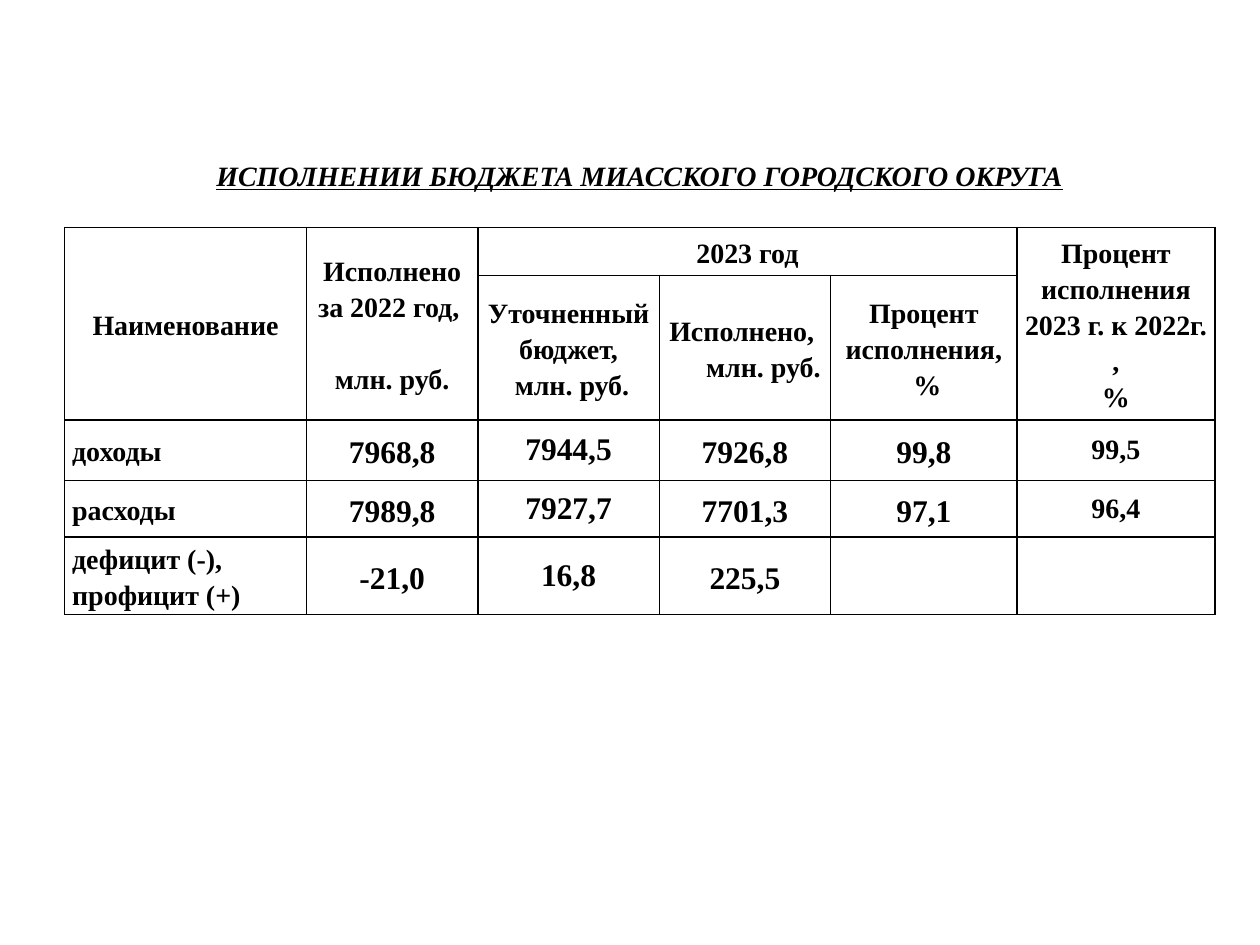
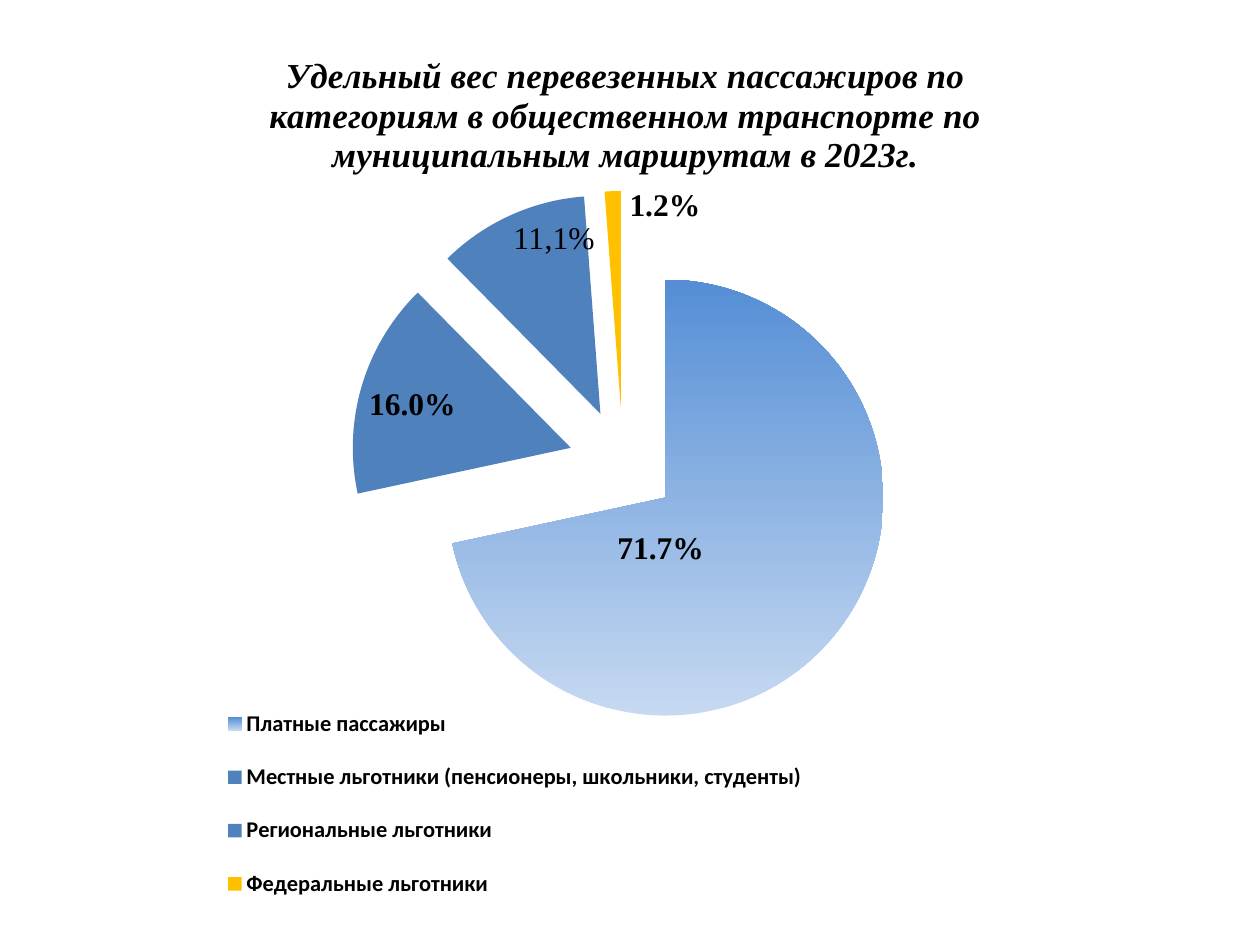
from pptx import Presentation
from pptx.chart.data import CategoryChartData
from pptx.dml.color import RGBColor
from pptx.enum.chart import XL_CHART_TYPE, XL_LABEL_POSITION, XL_LEGEND_POSITION
from pptx.enum.text import MSO_ANCHOR, PP_ALIGN
from pptx.oxml import parse_xml
from pptx.oxml.ns import nsdecls, qn
from pptx.util import Inches, Pt

BLACK = RGBColor(0x00, 0x00, 0x00)
BLUE = RGBColor(0x4F, 0x81, 0xBD)
GOLD = RGBColor(0xFF, 0xC0, 0x00)
PALE_BLUE = RGBColor(0xC6, 0xD9, 0xF1)
MID_BLUE = RGBColor(0x55, 0x8E, 0xD5)
SERIF, SANS = "Times New Roman", "Calibri"
LEFT, CENTER, RIGHT = PP_ALIGN.LEFT, PP_ALIGN.CENTER, PP_ALIGN.RIGHT
MIDDLE = MSO_ANCHOR.MIDDLE
LABEL_CENTER, INSIDE_END = XL_LABEL_POSITION.CENTER, XL_LABEL_POSITION.INSIDE_END
PIE, LEGEND_TOP = XL_CHART_TYPE.PIE, XL_LEGEND_POSITION.TOP
PERCENT = '0.0"%"'

prs = Presentation()
prs.slide_width, prs.slide_height = Inches(10), Inches(7.5)
PX, PY = prs.slide_width / 100, prs.slide_height / 100  # one percent of the slide
blank = prs.slide_layouts[6]


def style_font(font, size, name=SERIF, bold=True):
    font.size, font.name, font.bold = Pt(size), name, bold
    font.color.rgb = BLACK


def set_layout(parent, index, modes=(), **percents):
    """Give a chart element a manual layout, in percent of the chart."""
    for old in parent.findall(qn("c:layout")):
        parent.remove(old)
    body = "".join(f'<c:{k} val="{v}"/>' for k, v in modes)
    body += "".join(f'<c:{k} val="{v / 100}"/>' for k, v in percents.items())
    parent.insert(index, parse_xml(
        f'<c:layout {nsdecls("c")}><c:manualLayout>{body}</c:manualLayout></c:layout>'))


# Slide 1: budget table
s = prs.slides.add_slide(blank)
col_shares = [19.2, 13.6, 14.4, 1.6, 12, 1.6, 13.2, 15.7]
row_shares = [4.1, 3.58, 5.07, 15.3, 6.4, 6, 8.2]
frame = s.shapes.add_table(len(row_shares), len(col_shares), int(5.13 * PX), int(16.4 * PY),
                           int(sum(col_shares) * PX), int(sum(row_shares) * PY))
table = frame.table
table.first_row = table.horz_banding = False
for col, share in zip(table.columns, col_shares):
    col.width = int(share * PX)
for row, share in zip(table.rows, row_shares):
    row.height = int(share * PY)

# Merged areas: first and last cell
spans = [((0, 0), (0, 7)), ((1, 2), (1, 3)), ((1, 4), (1, 5)), ((2, 0), (3, 0)),
         ((2, 1), (3, 1)), ((2, 2), (2, 6)), ((2, 7), (3, 7))]
spans += [((r, c), (r, c + 1)) for r in range(3, 7) for c in (3, 5)]
for first, last in spans:
    table.cell(*first).merge(table.cell(*last))

# Cell texts: lines of (text, alignment, space before)
lines = {
    (0, 0): [("ИСПОЛНЕНИИ БЮДЖЕТА МИАССКОГО ГОРОДСКОГО ОКРУГА", CENTER, 0)],
    (2, 0): [("Наименование", CENTER, 0)],
    (2, 1): [("Исполнено за 2022 год, ", CENTER, 0), ("млн. руб.", CENTER, 21)],
    (2, 2): [("2023 год", CENTER, 0)],
    (2, 7): [("Процент исполнения 2023 г. к 2022г. ,", CENTER, 0), ("%", CENTER, 0)],
    (3, 2): [("Уточненный бюджет,", CENTER, 0), (" млн. руб.", CENTER, 0)],
    (3, 3): [("Исполнено,", LEFT, 0), ("млн. руб.", RIGHT, 0)],
    (3, 5): [("Процент исполнения,", CENTER, 0), (" %", CENTER, 0)],
}
budget = [
    ("доходы", "7968,8", "7944,5", "7926,8", "99,8", "99,5"),
    ("расходы", "7989,8", "7927,7", "7701,3", "97,1", "96,4"),
    ("дефицит (-), профицит (+)", "-21,0", "16,8", "225,5", "", ""),
]
for r, values in enumerate(budget, start=4):
    for c, value in zip((0, 1, 2, 3, 5, 7), values):
        if value:
            lines[r, c] = [(value, CENTER if c else LEFT, 0)]

for r in range(len(row_shares)):
    for c in range(len(col_shares)):
        cell = table.cell(r, c)
        cell.fill.background()
        cell.vertical_anchor = MIDDLE
        cell.margin_top = cell.margin_bottom = 0
        tight = r >= 4 and c in (2, 7)
        margin = 0.01 if tight else 0.08 if (r, c) == (3, 3) else 0.06
        cell.margin_left = cell.margin_right = Inches(margin)
        tf = cell.text_frame
        for i, (text, align, before) in enumerate(lines.get((r, c), [])):
            p = tf.add_paragraph() if i else tf.paragraphs[0]
            p.alignment = align
            p.line_spacing = 1.0 if tight else 1.15
            if before:
                p.space_before = Pt(before)
            run = p.add_run()
            run.text = text
            style_font(run.font, 18 if r >= 4 and 0 < c < 7 else 16)
            run.font.italic = run.font.underline = r == 0
        if (r, c) not in lines:
            tf.paragraphs[0]._p.append(parse_xml(f'<a:endParaRPr {nsdecls("a")} sz="1000"/>'))
        # Full grid below the heading, one rule under the spacer row
        sides = ["lnL", "lnR", "lnT", "lnB"] if r >= 2 else ["lnB"] if r == 1 else []
        for i, side in enumerate(sides):
            cell._tc.get_or_add_tcPr().insert(i, parse_xml(
                f'<a:{side} {nsdecls("a")} w="12700"><a:solidFill>'
                f'<a:srgbClr val="{BLACK}"/></a:solidFill></a:{side}>'))

# Slide 2: passenger pie chart
s = prs.slides.add_slide(blank)
data = CategoryChartData(number_format=PERCENT)
data.categories = ["Платные пассажиры", "Местные льготники (пенсионеры, школьники, студенты)",
                   "Региональные льготники", "Федеральные льготники"]
data.add_series("Series 1", (71.7, 16, 11.2, 1.2))
chart = s.shapes.add_chart(PIE, int(11.4 * PX), int(2.27 * PY),
                           int(76.4 * PX), int(95.47 * PY), data).chart
style_font(chart.font, 10, SANS, False)
edges = (("xMode", "edge"), ("yMode", "edge"))

# Title
chart.has_title = True
p = chart.chart_title.text_frame.paragraphs[0]
run = p.add_run()
run.text = ("Удельный вес перевезенных пассажиров по категориям "
            "в общественном транспорте по муниципальным маршрутам в 2023г.")
style_font(run.font, 20)
run.font.italic = True
set_layout(chart.chart_title._element, 1, edges, x=12.4, y=2.8)

# Legend and plot area
chart.has_legend = True
legend = chart.legend
legend.position = LEGEND_TOP
legend.include_in_layout = False
style_font(legend.font, 12.8, SANS)
set_layout(legend._element, 1, edges, x=7, y=73.5, w=63, h=26.5)
plot = chart.plots[0]
plot.vary_by_categories = True
set_layout(chart._chartSpace.chart.plotArea, 0, (("layoutTarget", "inner"), *edges),
           x=4.2, y=18.8, w=91.2, h=60.4)

# Slices
series = plot.series[0]
series._element.find(qn("c:tx")).addnext(parse_xml(f'<c:explosion {nsdecls("c")} val="25"/>'))
for i, color in enumerate((None, BLUE, BLUE, GOLD)):
    fill = series.points[i].format.fill
    if color is not None:
        fill.solid()
        fill.fore_color.rgb = color
    else:
        fill.gradient()
        fill.gradient_angle = 90
        for stop, shade, place in zip(fill.gradient_stops, (PALE_BLUE, MID_BLUE), (0, 1)):
            stop.color.rgb, stop.position = shade, place
    explosion = parse_xml(f'<c:explosion {nsdecls("c")} val="25"/>')
    series.points[i].format._element.find(qn("c:spPr")).addprevious(explosion)

# Labels
labels = series.data_labels
labels.show_value, labels.show_percentage = True, False
labels.number_format, labels.number_format_is_linked = PERCENT, False
labels.position = INSIDE_END
style_font(labels.font, 18)
for i, position, dx, dy in ((0, LABEL_CENTER, -9.3, -1.9), (3, INSIDE_END, 5.4, -1.1)):
    label = series.points[i].data_label
    style_font(label.font, 18)
    label.position = position
    dlbl = label._get_or_add_dLbl()
    set_layout(dlbl, 1, x=dx, y=dy)
    dlbl.insert(2, parse_xml(
        f'<c:numFmt {nsdecls("c")} formatCode="0.0&quot;%&quot;" sourceLinked="0"/>'))
label = series.points[2].data_label
run = label.text_frame.paragraphs[0].add_run()
run.text = "11,1%"
style_font(run.font, 18, bold=False)
label.position = INSIDE_END

prs.save("out.pptx")
